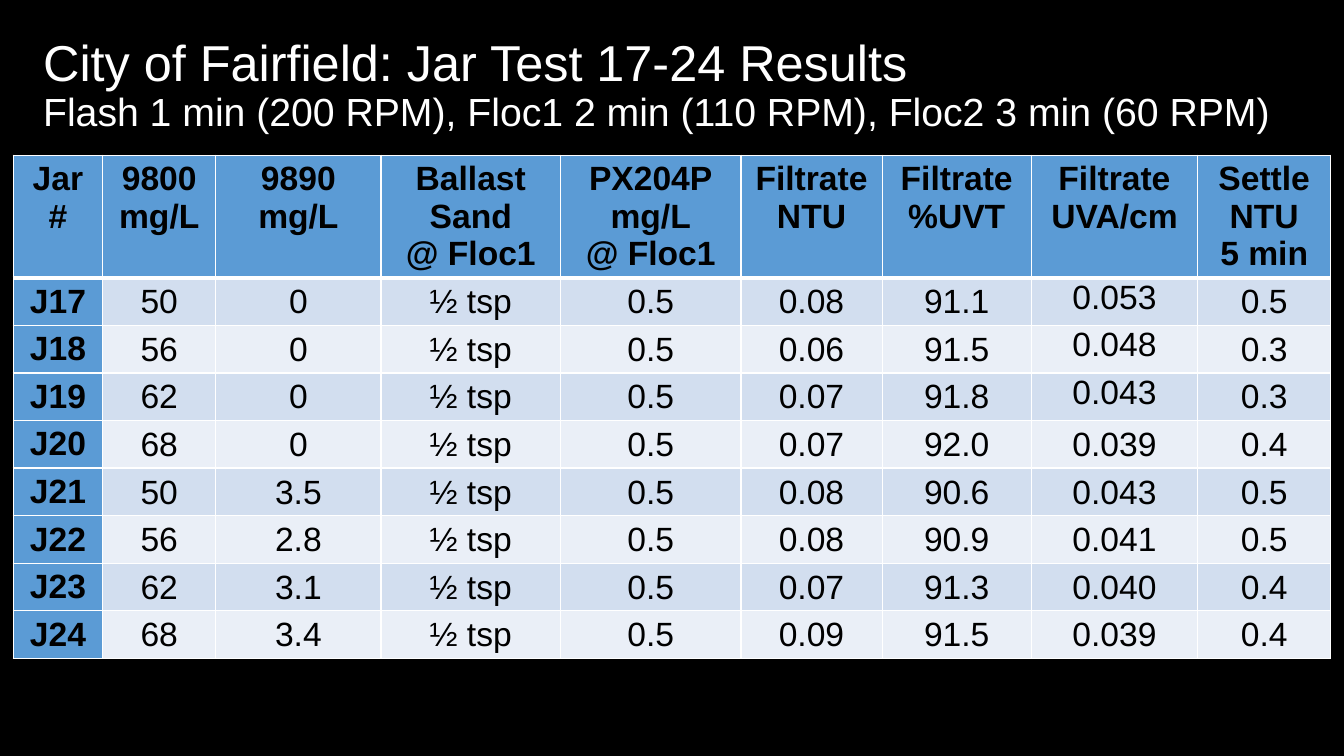
from lxml import etree
from pptx import Presentation
from pptx import util as u
from pptx.dml.color import RGBColor
from pptx.enum import text
from pptx.oxml.ns import qn

WHITE, BLACK, BLUE = "FFFFFF", "000000", "5B9BD5"
BANDS = ["D2DEEF", "EAEFF7"]


def paint(target, colour):
    """Colour a font, or give a fill a solid colour."""
    if hasattr(target, "solid"):
        target.solid()
        target.fore_color.rgb = RGBColor.from_string(colour)
    else:
        target.color.rgb = RGBColor.from_string(colour)


def add_borders(cell, bottom, top):
    """Draw white borders, with widths in points."""
    props = cell._tc.get_or_add_tcPr()
    widths = {"a:lnL": 1, "a:lnR": 1, "a:lnT": top, "a:lnB": bottom}
    for place, (tag, width) in enumerate(widths.items()):
        line = etree.Element(qn(tag), w=str(u.Pt(width)))
        fill = etree.SubElement(line, qn("a:solidFill"))
        etree.SubElement(fill, qn("a:srgbClr"), val=WHITE)
        props.insert(place, line)


# Slide
deck = Presentation()
deck.slide_width, deck.slide_height = u.Inches(13.33), u.Inches(7.5)
page = deck.slides.add_slide(deck.slide_layouts[6])
paint(page.background.fill, BLACK)

# Results table
header = ["Jar #", "9800\nmg/L", "9890\nmg/L", "Ballast\nSand\n@ Floc1",
          "PX204P\nmg/L\n@ Floc1", "Filtrate\nNTU", "Filtrate\n%UVT",
          "Filtrate\nUVA/cm", "Settle\nNTU\n5 min"]
results = [
    ["J17", "50", "0", "½ tsp", "0.5", "0.08", "91.1", "0.053", "0.5"],
    ["J18", "56", "0", "½ tsp", "0.5", "0.06", "91.5", "0.048", "0.3"],
    ["J19", "62", "0", "½ tsp", "0.5", "0.07", "91.8", "0.043", "0.3"],
    ["J20", "68", "0", "½ tsp", "0.5", "0.07", "92.0", "0.039", "0.4"],
    ["J21", "50", "3.5", "½ tsp", "0.5", "0.08", "90.6", "0.043", "0.5"],
    ["J22", "56", "2.8", "½ tsp", "0.5", "0.08", "90.9", "0.041", "0.5"],
    ["J23", "62", "3.1", "½ tsp", "0.5", "0.07", "91.3", "0.040", "0.4"],
    ["J24", "68", "3.4", "½ tsp", "0.5", "0.09", "91.5", "0.039", "0.4"],
]
column_widths = [0.89, 1.12, 1.64, 1.78, 1.79, 1.4, 1.48, 1.65, 1.32]
row_heights = [1.21] + [0.47] * len(results)
UVA_COLUMN, LAST_TOP_ROW = 7, 3

table = page.shapes.add_table(
    len(row_heights), len(column_widths), u.Inches(0.13), u.Inches(1.54),
    u.Inches(sum(column_widths)), u.Inches(sum(row_heights))).table
table.first_col = True
for column, width in zip(table.columns, column_widths):
    column.width = u.Inches(width)
for row, height in zip(table.rows, row_heights):
    row.height = u.Inches(height)

for r, values in enumerate([header] + results):
    for c, value in enumerate(values):
        cell = table.cell(r, c)
        is_heading = r == 0 or c == 0
        cell.text = value
        paint(cell.fill, BLUE if is_heading else BANDS[(r - 1) % 2])
        add_borders(cell, bottom=3 if r == 0 else 1, top=3 if r == 1 else 1)
        if not is_heading:
            cell.margin_left = cell.margin_right = cell.margin_top = u.Inches(0.01)
            cell.margin_bottom = 0
            at_top = c == UVA_COLUMN and r <= LAST_TOP_ROW
            cell.vertical_anchor = (text.MSO_ANCHOR.TOP if at_top
                                    else text.MSO_ANCHOR.MIDDLE)
        for para in cell.text_frame.paragraphs:
            para.alignment = text.PP_ALIGN.CENTER
            para.font.name, para.font.size = "Arial", u.Pt(24)
            para.font.bold = is_heading
            paint(para.font, BLACK)

# Title: two lines in one paragraph
box = page.shapes.add_textbox(u.Inches(0.33), u.Inches(0.13),
                              u.Inches(12.47), u.Inches(1.45))
box.text_frame.word_wrap = True
box.text_frame.vertical_anchor = text.MSO_ANCHOR.MIDDLE
para = box.text_frame.paragraphs[0]
para.line_spacing = 0.9
para.font.name = "Arial"
paint(para.font, WHITE)
title_lines = [
    ("City of Fairfield: Jar Test 17-24 Results", 36),
    ("Flash 1 min (200 RPM), Floc1 2 min (110 RPM), Floc2 3 min (60 RPM)", 28),
]
for index, (line, size) in enumerate(title_lines):
    if index:
        para.add_line_break()
    span = para.add_run()
    span.text, span.font.size = line, u.Pt(size)

deck.save("out.pptx")
